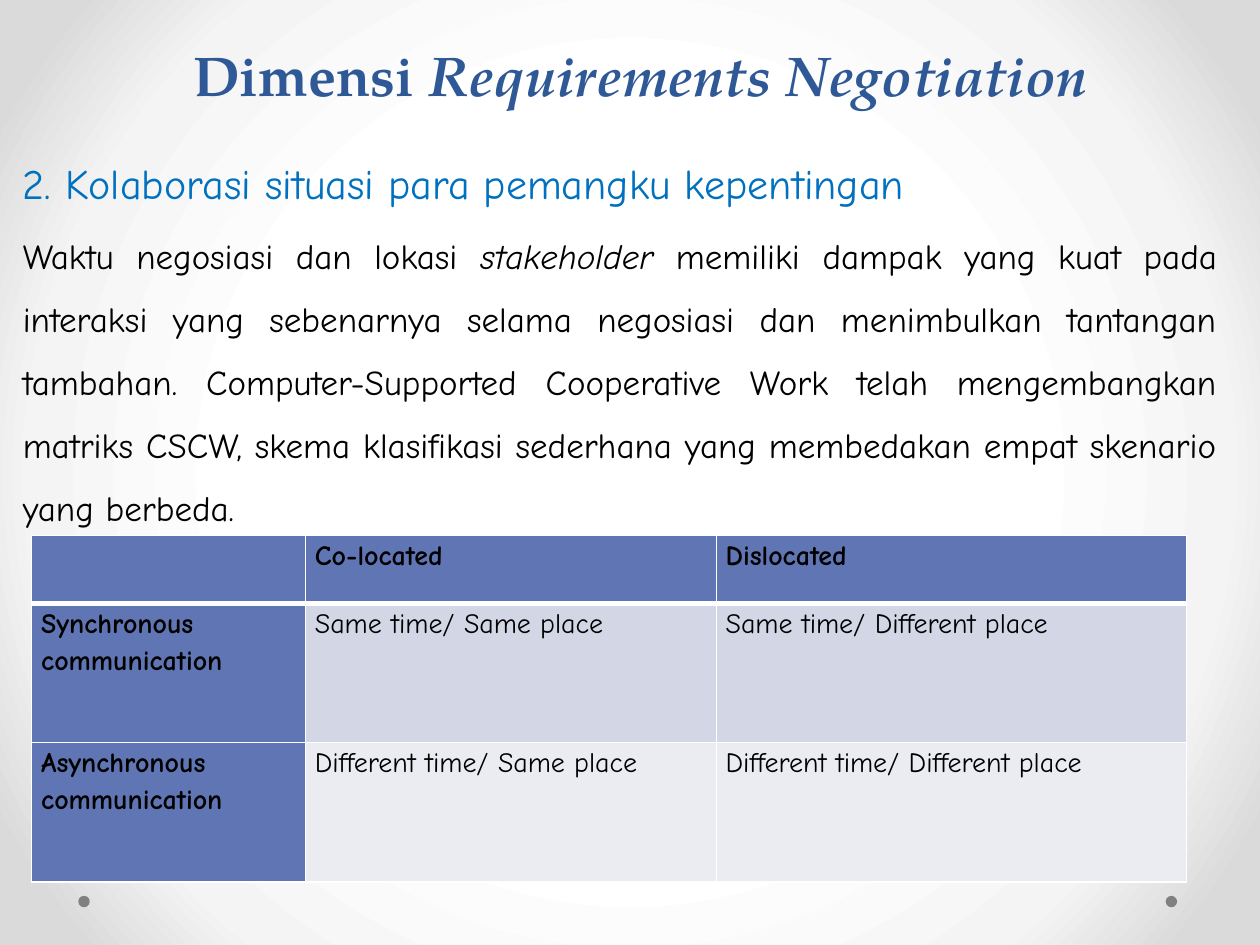
from pptx import Presentation
from pptx.dml.color import RGBColor
from pptx.enum.shapes import MSO_SHAPE
from pptx.enum.text import MSO_ANCHOR, PP_ALIGN
from pptx.oxml import parse_xml
from pptx.util import Cm, Pt

NS = 'xmlns:a="http://schemas.openxmlformats.org/drawingml/2006/main"'
HUES = {"title": "2F5897", "lead": "0070C0", "text": "000000", "dot": "808080",
        "head": "6076B4", "odd": "D2D6E5", "even": "EAECF2", "line": "FFFFFF"}
GLOW = [(50, "FFFFFF"), (76, "F4F4F4"), (92, "DADADA")]
SERIF, HAND = "TeX Gyre Pagella", "Comic Neue"

TITLE = [("Dimensi ", False), ("Requirements Negotiation", True)]
LEAD = [("2. Kolaborasi situasi para pemangku kepentingan", False)]
BODY = [
    ("Waktu negosiasi dan lokasi ", False),
    ("stakeholder ", True),
    ("memiliki dampak yang kuat pada interaksi yang sebenarnya selama negosiasi dan "
     "menimbulkan tantangan tambahan. Computer-Supported Cooperative Work telah "
     "mengembangkan matriks CSCW, skema klasifikasi sederhana yang membedakan empat "
     "skenario yang berbeda.", False),
]
GRID = [
    ("", "Co-located", "Dislocated"),
    ("Synchronous communication", "Same time/ Same place", "Same time/ Different place"),
    ("Asynchronous communication", "Different time/ Same place",
     "Different time/ Different place"),
]
COLS, ROWS = (5.52, 8.28, 9.48), (1.36, 2.81, 2.81)
DOTS = (1.58, 23.5)


def color(name):
    return RGBColor.from_string(HUES[name])


def write(para, parts, size, face, hue, bold, align, space):
    para.alignment, para.line_spacing = align, space
    for text, slant in parts:
        run = para.add_run()
        run.text = text
        font = run.font
        font.size, font.name, font.bold, font.italic = Pt(size), face, bold, slant
        font.color.rgb = color(hue)


def paint(slide):
    slide.background.fill.solid()
    stops = "".join(f'<a:gs pos="{pos * 1000}"><a:srgbClr val="{hue}"/></a:gs>'
                    for pos, hue in GLOW)
    grad = parse_xml(f'<a:gradFill {NS} rotWithShape="1"><a:gsLst>{stops}</a:gsLst>'
                     '<a:path path="circle"><a:fillToRect l="50000" t="50000" '
                     'r="50000" b="50000"/></a:path></a:gradFill>')
    solid = slide.element.xpath("p:cSld/p:bg/p:bgPr/a:solidFill")[0]
    solid.getparent().replace(solid, grad)


def add_dots(slide):
    for left in DOTS:
        dot = slide.shapes.add_shape(MSO_SHAPE.OVAL, Cm(left), Cm(18.06), Cm(0.23), Cm(0.23))
        dot.shadow.inherit = False
        dot.fill.solid()
        dot.fill.fore_color.rgb = color("dot")
        dot.line.fill.background()


def add_title(slide):
    title = slide.shapes.title
    title.left, title.top, title.width, title.height = Cm(0.85), Cm(0.4), Cm(24.13), Cm(1.9)
    frame = title.text_frame
    frame.vertical_anchor = MSO_ANCHOR.BOTTOM
    write(frame.paragraphs[0], TITLE, 32, SERIF, "title", True, PP_ALIGN.CENTER, Pt(58))


def add_body(slide):
    frame = slide.shapes.add_textbox(Cm(0.21), Cm(2.54), Cm(24.58), Cm(15.67)).text_frame
    frame.word_wrap = True
    write(frame.paragraphs[0], LEAD, 24, HAND, "lead", False, PP_ALIGN.JUSTIFY, 1.5)
    para = frame.add_paragraph()
    para.space_before = Pt(3)
    write(para, BODY, 20, HAND, "text", False, PP_ALIGN.JUSTIFY, 1.5)


def edge(cell, head):
    props = cell._tc.get_or_add_tcPr()
    for spot, side in enumerate("LRTB"):
        width = Pt(3 if head and side == "B" else 1)
        props.insert(spot, parse_xml(
            f'<a:ln{side} {NS} w="{width}"><a:solidFill><a:srgbClr val="{HUES["line"]}"/>'
            f'</a:solidFill></a:ln{side}>'))


def add_grid(slide):
    table = slide.shapes.add_table(len(ROWS), len(COLS), Cm(0.64), Cm(10.8),
                                   Cm(sum(COLS)), Cm(sum(ROWS))).table
    for col, width in zip(table.columns, COLS):
        col.width = Cm(width)
    for y, (row, high) in enumerate(zip(GRID, ROWS)):
        table.rows[y].height = Cm(high)
        for x, text in enumerate(row):
            cell = table.cell(y, x)
            head = y == 0 or x == 0
            cell.margin_left = cell.margin_right = Cm(0.19)
            cell.margin_top = cell.margin_bottom = 0
            cell.fill.solid()
            cell.fill.fore_color.rgb = color("head" if head else "odd" if y % 2 else "even")
            edge(cell, y == 0)
            if text:
                write(cell.text_frame.paragraphs[0], [(text, False)], 16, HAND, "text",
                      head, PP_ALIGN.JUSTIFY, 1.15)


def main():
    """Build the slide on the dimensions of requirements negotiation."""
    deck = Presentation()
    deck.slide_width, deck.slide_height = Cm(25.4), Cm(19.05)
    slide = deck.slides.add_slide(deck.slide_layouts[5])
    for step in (paint, add_dots, add_title, add_body, add_grid):
        step(slide)
    deck.save("out.pptx")


if __name__ == "__main__":
    main()
